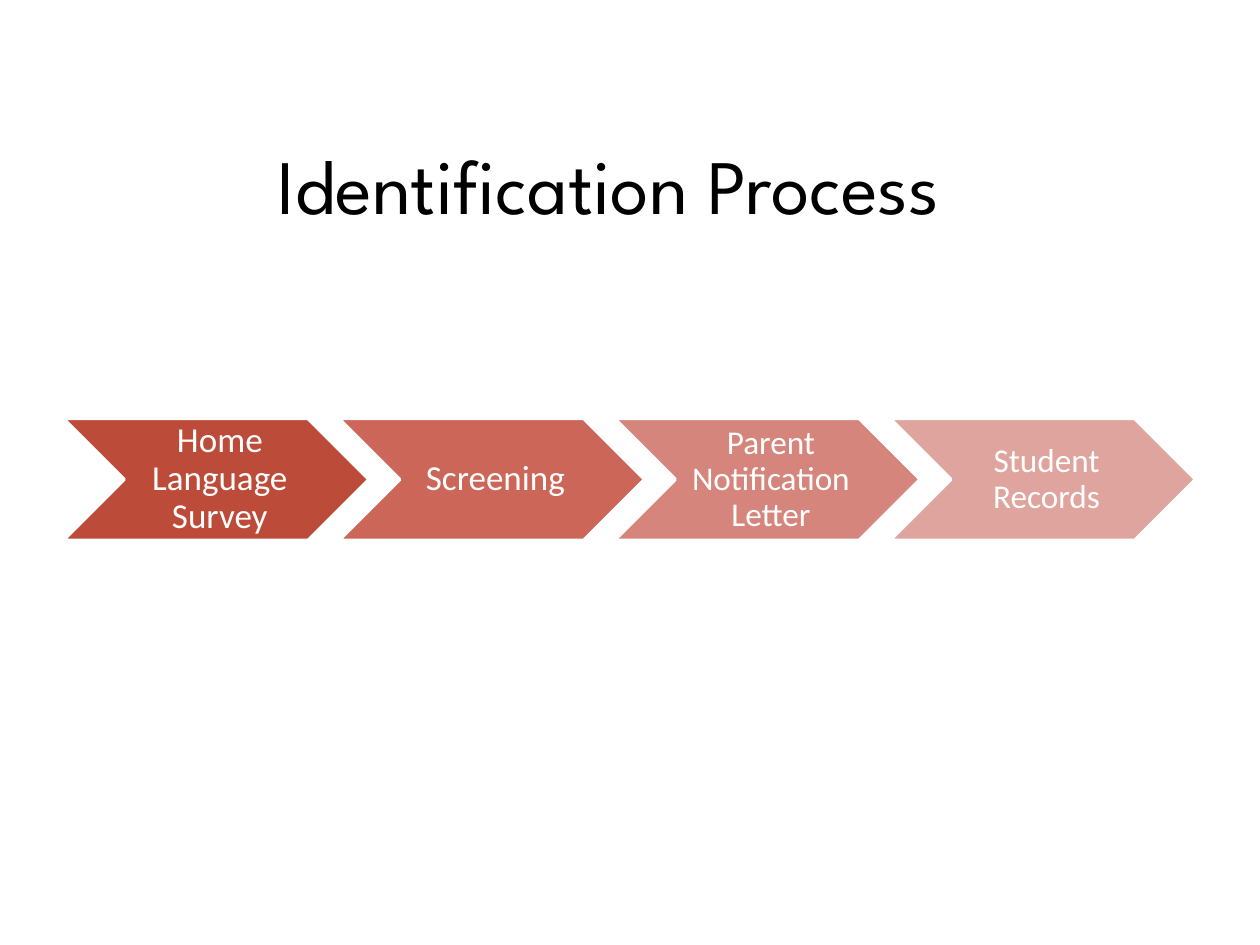
from pptx import Presentation
from pptx import util as u
from pptx.dml.color import RGBColor
from pptx.enum import shapes, text

# Content
TITLE = "Identification Process"
STEPS = [  # label, fill, text size
    ("Home Language Survey", "BC4C39", 20),
    ("Screening", "CB6658", 20),
    ("Parent Notification Letter", "D5857B", 19),
    ("Student Records", "DFA49E", 19),
]

# Row of chevrons: each starts 90 % of a width after the one before
ROW_LEFT, ROW_TOP = 0.5, 3.32
STEP_WIDTH, STEP_HEIGHT = 2.43, 0.97
STEP_PITCH = 0.9 * STEP_WIDTH


def color(value):
    return RGBColor.from_string(value)


def write(shape, words, font, size, ink, insets):
    frame = shape.text_frame
    frame.text = words
    frame.word_wrap = True
    frame.vertical_anchor = text.MSO_ANCHOR.MIDDLE
    (frame.margin_left, frame.margin_top,
     frame.margin_right, frame.margin_bottom) = map(u.Inches, insets)
    para = frame.paragraphs[0]
    para.alignment = text.PP_ALIGN.CENTER
    span = para.runs[0]
    span.font.name = font
    span.font.size = u.Pt(size)
    span.font.color.rgb = color(ink)
    return para


deck = Presentation()
deck.slide_width, deck.slide_height = u.Inches(10), u.Inches(7.5)
page = deck.slides.add_slide(deck.slide_layouts[6])

# Title, set slightly left of centre by a wider right inset
title = page.shapes.add_textbox(
    u.Inches(0.5), u.Inches(0.83), u.Inches(9), u.Inches(1.25))
write(title, TITLE, "League Spartan", 44, "000000", (0.1, 0.05, 0.43, 0.05))

# Process steps
for index, (label, fill, size) in enumerate(STEPS):
    step = page.shapes.add_shape(
        shapes.MSO_SHAPE.CHEVRON,
        u.Inches(ROW_LEFT + index * STEP_PITCH), u.Inches(ROW_TOP),
        u.Inches(STEP_WIDTH), u.Inches(STEP_HEIGHT))
    step.shadow.inherit = False
    step.fill.solid()
    step.fill.fore_color.rgb = color(fill)
    step.line.color.rgb = color("FFFFFF")
    step.line.width = u.Pt(2)
    para = write(step, label, "Calibri", size, "FFFFFF",
                 (0.09, 0.03, 0.03, 0.03))
    para.line_spacing = 0.9

deck.save("out.pptx")
